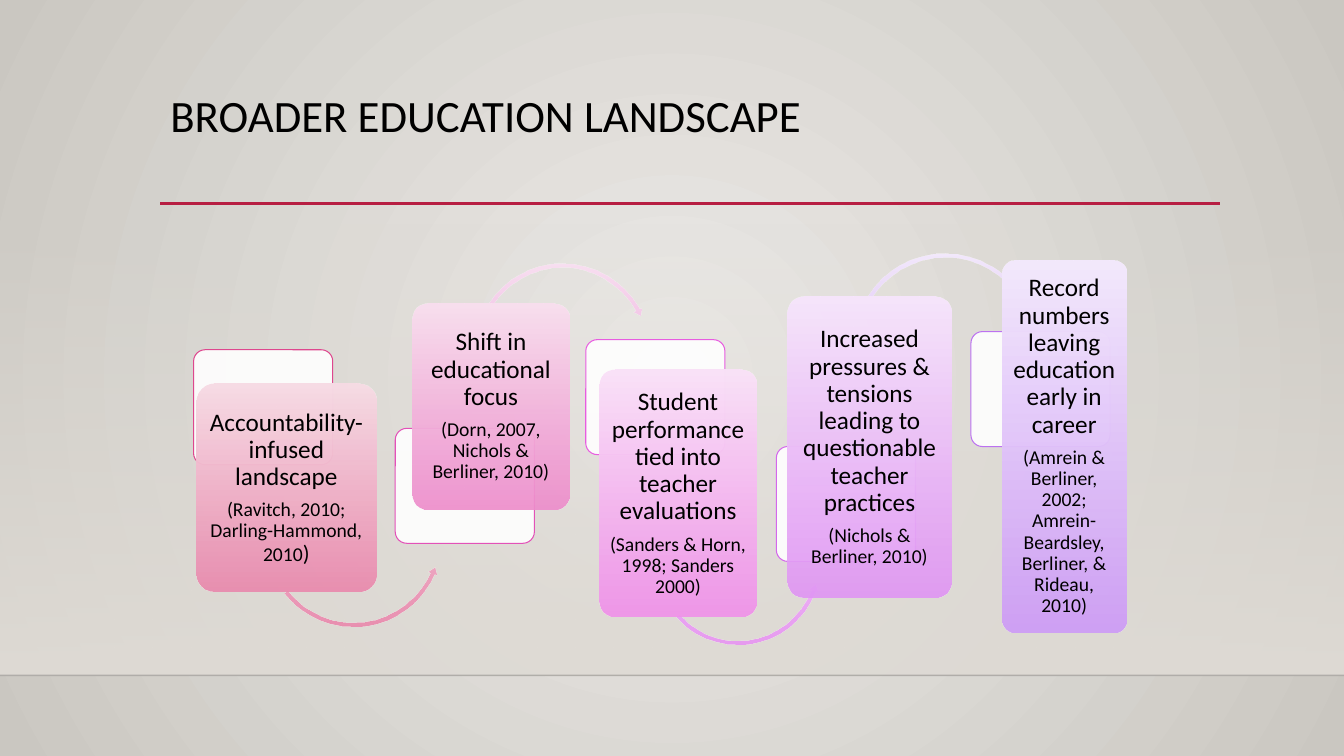
from dataclasses import dataclass
from typing import Any, Optional

import lxml.etree
import pptx
import pptx.dml.color
import pptx.enum.shapes
import pptx.enum.text
import pptx.oxml.ns
import pptx.util

Inches = pptx.util.Inches
Pt = pptx.util.Pt
MSO_SHAPE = pptx.enum.shapes.MSO_SHAPE
PP_ALIGN = pptx.enum.text.PP_ALIGN
MSO_ANCHOR = pptx.enum.text.MSO_ANCHOR
qn = pptx.oxml.ns.qn

Box = tuple[float, float, float, float]
PANEL_SIZE = (1.38, 1.14)
END_ALPHA = 92
FRAME_FORMAT = {
    "word_wrap": True,
    "auto_size": pptx.enum.text.MSO_AUTO_SIZE.NONE,
}
CARD_FRAME = FRAME_FORMAT | {
    "vertical_anchor": MSO_ANCHOR.MIDDLE,
    "margin_left": Inches(0.04),
    "margin_right": Inches(0.04),
    "margin_top": Inches(0.03),
    "margin_bottom": Inches(0.03),
}
CARD_PARAGRAPH = {
    "alignment": PP_ALIGN.CENTER,
    "line_spacing": 0.9,
    "space_after": Pt(6.3),
}


@dataclass(frozen=True)
class Arrow:
    box: Box
    bends_up: bool
    adjustments: tuple[float, ...]
    shades: tuple[str, str]


@dataclass(frozen=True)
class Step:
    heading: str
    citation: str
    card: Box
    shades: tuple[str, str]
    panel_corner: tuple[float, float]
    panel_line: str
    arrow: Optional[Arrow] = None
    citation_end: str = ""


STEPS = [
    Step("Accountability-infused landscape", "(Ravitch, 2010; Darling-Hammond, 2010",
         (1.95, 3.81, 1.78, 2.06), ("F7DCE5", "EA8AAE"), (1.92, 3.47), "DE478E",
         Arrow((2.6, 4.43, 1.81, 1.81), False,
               (0.023, 2.724, 14.973, 84.74, 0.026), ("F7DCE5", "EA8AAE")), ")"),
    Step("Shift in educational focus", "(Dorn, 2007, Nichols & Berliner, 2010)",
         (4.09, 3.01, 1.56, 2.04), ("F9DFEF", "EE8ECC"), (3.92, 4.25), "E351B8",
         Arrow((4.68, 2.59, 1.8, 1.8), True,
               (0.023, 2.727, 198.255, 128.492, 0.026), ("F9E0F2", "EF8FD6"))),
    Step("Student performance tied into teacher evaluations",
         "(Sanders & Horn, 1998; Sanders 2000)",
         (5.95, 3.67, 1.55, 2.45), ("FAE2F8", "F192EA"), (5.81, 3.37), "E85CE0",
         Arrow((6.47, 4.72, 1.7, 1.7), False,
               (0.024, 2.896, 13.09, 82.684, 0.028), ("F8E5FB", "E895F3"))),
    Step("Increased pressures & tensions leading to questionable teacher practices",
         "(Nichols & Berliner, 2010)",
         (7.81, 2.94, 1.63, 2.99), ("F7E6FC", "E197F4"), (7.7, 4.43), "D467EC",
         Arrow((8.43, 2.49, 1.88, 1.88), True,
               (0.022, 2.613, 198.118, 128.242, 0.025), ("F4EAFD", "CE9CF7"))),
    Step("Record numbers leaving education early in career",
         "(Amrein & Berliner, 2002; Amrein-Beardsley, Berliner, & Rideau, 2010)",
         (9.94, 2.58, 1.23, 3.69), ("F4EAFD", "CE9CF7"), (9.63, 3.29), "BC72F0"),
]


def rgb(value: str) -> pptx.dml.color.RGBColor:
    return pptx.dml.color.RGBColor.from_string(value)


def apply_format(target: Any, values: dict[str, Any]) -> None:
    for name, value in values.items():
        setattr(target, name, value)


def set_alpha(element: Any, index: int, percent: int) -> None:
    """Give the element's colour at this index an opacity."""
    colour = element.xpath(".//a:srgbClr")[index]
    lxml.etree.SubElement(colour, qn("a:alpha"), val=str(percent * 1000))


def fill_gradient(fill: Any, shades: tuple[str, str]) -> None:
    """Fill from the first shade at the top to the second at the bottom."""
    fill.gradient()
    fill.gradient_angle = 270
    for stop, shade in zip(fill.gradient_stops, shades):
        stop.color.rgb = rgb(shade)


def add_plain_shape(slide: Any, kind: Any, box: Box) -> Any:
    shape = slide.shapes.add_shape(kind, *map(Inches, box))
    shape.shadow.inherit = False
    shape.line.fill.background()
    return shape


def add_rule(slide: Any, left: float, right: float, top: float,
             colour: str, width: float) -> Any:
    rule = slide.shapes.add_connector(
        pptx.enum.shapes.MSO_CONNECTOR.STRAIGHT,
        Inches(left), Inches(top), Inches(right), Inches(top))
    rule.line.color.rgb = rgb(colour)
    rule.line.width = Pt(width)
    lxml.etree.SubElement(rule.element.spPr, qn("a:effectLst"))
    return rule


def add_run(paragraph: Any, text: str, size: float) -> None:
    run = paragraph.add_run()
    run.text = text
    apply_format(run.font, {"size": Pt(size), "name": "Calibri"})
    run.font.color.rgb = rgb("000000")


def draw_backdrop(slide: Any) -> None:
    fill_gradient(slide.background.fill, ("ECEAE7", "CAC7C1"))
    gradient = slide.element.xpath(".//p:bg//a:gradFill")[0]
    gradient.remove(gradient.find(qn("a:lin")))
    radial = lxml.etree.SubElement(gradient, qn("a:path"), {"path": "circle"})
    lxml.etree.SubElement(radial, qn("a:fillToRect"), dict.fromkeys("ltrb", "50000"))

    wall = add_plain_shape(slide, MSO_SHAPE.RECTANGLE, (0, 2.21, 13.33, 4.49))
    fill_gradient(wall.fill, ("DFDBD5", "DFDBD5"))
    set_alpha(wall.element, 0, 0)
    floor_edge = add_rule(slide, 0, 13.33, 6.7, "000001", 1)
    set_alpha(floor_edge.element, 0, 20)
    add_rule(slide, 1.59, 12.1, 2.02, "B71E42", 2.5)


def draw_title(slide: Any) -> None:
    title = slide.shapes.title
    places = zip(("left", "top", "width", "height"), (1.59, 0.88, 10.5, 1.15))
    apply_format(title, {side: Inches(length) for side, length in places})
    apply_format(title.text_frame, FRAME_FORMAT | {"vertical_anchor": MSO_ANCHOR.TOP})
    heading = title.text_frame.paragraphs[0]
    apply_format(heading, {"alignment": PP_ALIGN.LEFT, "line_spacing": 0.9})
    add_run(heading, "BROADER EDUCATION LANDSCAPE", 32)


def draw_arrow(slide: Any, arrow: Arrow) -> None:
    kind = MSO_SHAPE.CIRCULAR_ARROW if arrow.bends_up else MSO_SHAPE.LEFT_CIRCULAR_ARROW
    curve = add_plain_shape(slide, kind, arrow.box)
    for index, value in enumerate(arrow.adjustments):
        curve.adjustments[index] = value
    fill_gradient(curve.fill, arrow.shades)
    set_alpha(curve.element, 1, END_ALPHA)


def draw_step(slide: Any, step: Step) -> None:
    panel = add_plain_shape(slide, MSO_SHAPE.ROUNDED_RECTANGLE,
                            (*step.panel_corner, *PANEL_SIZE))
    panel.adjustments[0] = 0.1
    panel.fill.solid()
    panel.fill.fore_color.rgb = rgb("FFFFFF")
    set_alpha(panel.element, 0, 90)
    panel.line.color.rgb = rgb(step.panel_line)
    panel.line.width = Pt(0.75)

    if step.arrow:
        draw_arrow(slide, step.arrow)

    card = add_plain_shape(slide, MSO_SHAPE.ROUNDED_RECTANGLE, step.card)
    card.adjustments[0] = 0.1
    fill_gradient(card.fill, step.shades)
    set_alpha(card.element, 1, END_ALPHA)
    apply_format(card.text_frame, CARD_FRAME)
    heading = card.text_frame.paragraphs[0]
    citation = card.text_frame.add_paragraph()
    for paragraph in (heading, citation):
        apply_format(paragraph, CARD_PARAGRAPH)
    add_run(heading, step.heading, 18)
    add_run(citation, step.citation, 14)
    if step.citation_end:
        add_run(citation, step.citation_end, 16)


def main() -> None:
    deck = pptx.Presentation()
    deck.slide_width, deck.slide_height = Inches(13.33), Inches(7.5)
    slide = deck.slides.add_slide(deck.slide_layouts.get_by_name("Title Only"))
    draw_backdrop(slide)
    draw_title(slide)
    for step in STEPS:
        draw_step(slide, step)
    deck.save("out.pptx")


if __name__ == "__main__":
    main()
